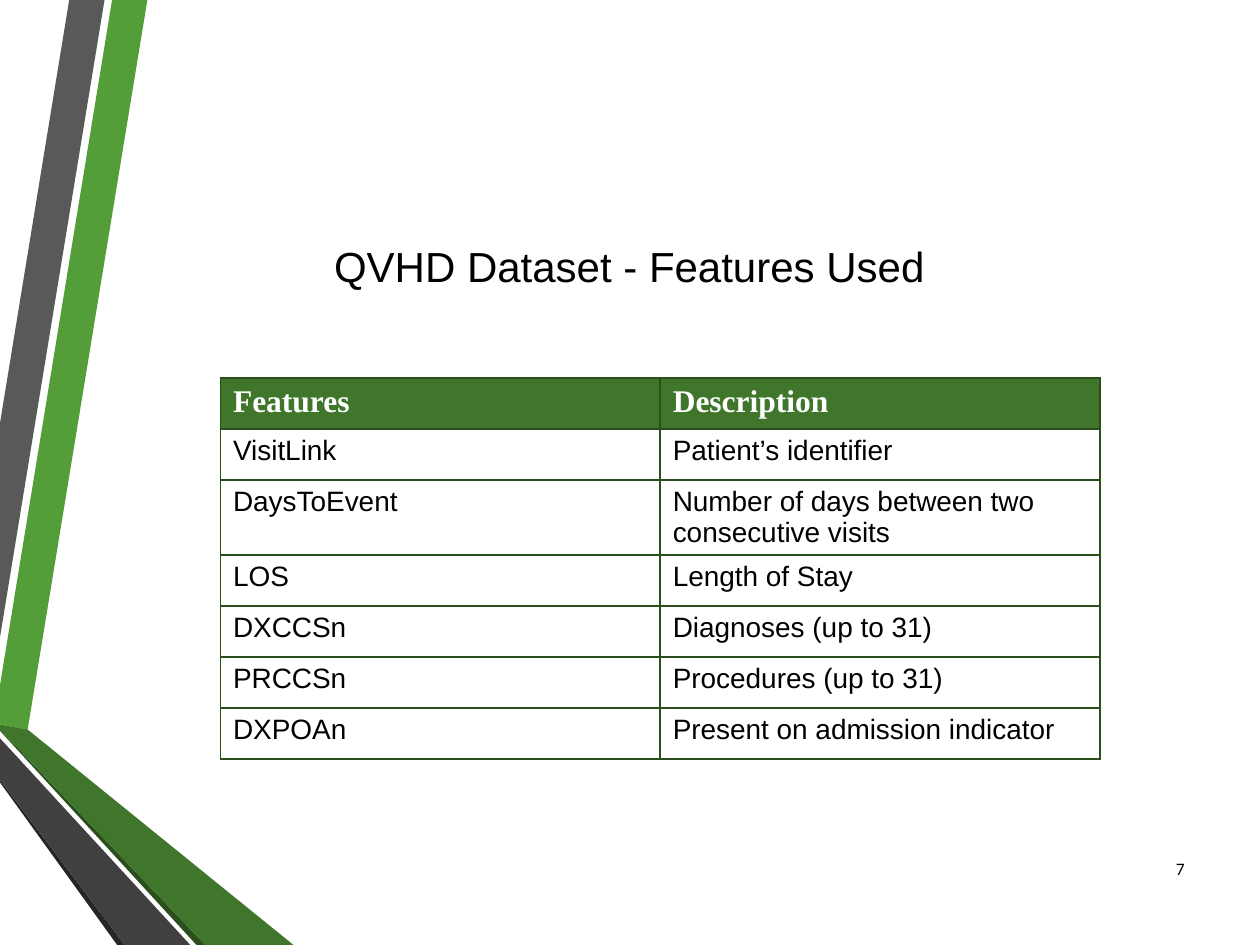
"""Builds the slide listing the features used from the QVHD dataset."""
from dataclasses import dataclass

from lxml import etree
from pptx import Presentation
from pptx.dml.color import RGBColor
from pptx.enum.text import MSO_ANCHOR, PP_ALIGN
from pptx.oxml.ns import qn
from pptx.util import Inches, Pt

TOP, MIDDLE = MSO_ANCHOR.TOP, MSO_ANCHOR.MIDDLE
CENTER, RIGHT = PP_ALIGN.CENTER, PP_ALIGN.RIGHT
TITLE_ONLY = 5


@dataclass(frozen=True)
class Theme:
    """Colours, fonts and sizes of the slide."""
    green: str = "549E39"
    mid_green: str = "3F762B"
    dark_green: str = "2A4F1C"
    gray: str = "595959"
    dark_gray: str = "404040"
    charcoal: str = "262626"
    ink: str = "000000"
    paper: str = "FFFFFF"
    body_font: str = "Arial"
    header_font: str = "Times New Roman"
    number_font: str = "Calibri"
    title_size: int = 24
    header_size: int = 18
    body_size: int = 16
    number_size: int = 10
    border_width: int = 1


THEME = Theme()

RIBBONS = [
    (THEME.green, [(0, 5.44), (0, 5.75), (0.22, 5.79), (1.17, 0), (0.89, 0)]),
    (THEME.gray, [(0.83, 0), (0.55, 0), (0, 3.36), (0, 5.06)]),
    (THEME.charcoal, [(0, 6.19), (0, 6.21), (0.93, 7.5), (0.99, 7.5)]),
    (THEME.dark_green, [(0, 5.79), (0, 5.8), (1.56, 7.5), (1.63, 7.5)]),
    (THEME.mid_green, [(0, 5.79), (1.63, 7.5), (2.33, 7.5), (0.22, 5.79), (0, 5.75)]),
    (THEME.dark_gray, [(0, 6.19), (0.99, 7.5), (1.51, 7.5), (0, 5.86)]),
]

FEATURES = [
    ("Features", "Description"),
    ("VisitLink", "Patient’s identifier"),
    ("DaysToEvent", "Number of days between two consecutive visits"),
    ("LOS", "Length of Stay"),
    ("DXCCSn", "Diagnoses (up to 31)"),
    ("PRCCSn", "Procedures (up to 31)"),
    ("DXPOAn", "Present on admission indicator"),
]


def add_run(paragraph, text, font, size, color=THEME.ink, bold=False):
    """Append a formatted run to a paragraph."""
    run = paragraph.add_run()
    run.text = text
    run.font.name = font
    run.font.size = Pt(size)
    run.font.bold = bold
    run.font.color.rgb = RGBColor.from_string(color)


def add_ribbon(slide, color, corners):
    """Draw one closed, filled ribbon from corners in inches."""
    points = [(Inches(x), Inches(y)) for x, y in corners]
    builder = slide.shapes.build_freeform(*points[0])
    builder.add_line_segments(points[1:], close=True)
    ribbon = builder.convert_to_shape()
    ribbon.shadow.inherit = False
    ribbon.fill.solid()
    ribbon.fill.fore_color.rgb = RGBColor.from_string(color)
    ribbon.line.fill.background()


def set_title(slide, text):
    """Place and fill the title placeholder."""
    title = slide.shapes.title
    title.left, title.top = Inches(1.75), Inches(1.86)
    title.width, title.height = Inches(6.49), Inches(0.5)
    title.text_frame.vertical_anchor = TOP
    heading = title.text_frame.paragraphs[0]
    heading.alignment = CENTER
    add_run(heading, text, THEME.body_font, THEME.title_size)


def add_page_number(slide, number):
    """Add the page number at the lower right."""
    box = slide.shapes.add_textbox(Inches(9.05), Inches(6.69), Inches(0.45), Inches(0.4))
    box.text_frame.word_wrap = True
    box.text_frame.vertical_anchor = MIDDLE
    paragraph = box.text_frame.paragraphs[0]
    paragraph.alignment = RIGHT
    add_run(paragraph, number, THEME.number_font, THEME.number_size)


def set_borders(cell):
    """Outline all four sides of a cell."""
    properties = cell._tc.get_or_add_tcPr()
    for index, side in enumerate(("a:lnL", "a:lnR", "a:lnT", "a:lnB")):
        border = etree.Element(qn(side), w=str(Pt(THEME.border_width)))
        fill = etree.SubElement(border, qn("a:solidFill"))
        etree.SubElement(fill, qn("a:srgbClr"), val=THEME.dark_green)
        properties.insert(index, border)


def fill_cell(cell, text, is_header):
    """Write and format one table cell."""
    paragraph = cell.text_frame.paragraphs[0]
    if is_header:
        cell.fill.solid()
        cell.fill.fore_color.rgb = RGBColor.from_string(THEME.mid_green)
        add_run(paragraph, text, THEME.header_font, THEME.header_size, THEME.paper, True)
    else:
        cell.fill.background()
        add_run(paragraph, text, THEME.body_font, THEME.body_size)
    set_borders(cell)


def add_feature_table(slide, rows):
    """Add the table of features under its header row."""
    row_height = Inches(0.405)
    table = slide.shapes.add_table(
        len(rows), len(rows[0]), Inches(1.75), Inches(3.0),
        Inches(6.98), row_height * len(rows)).table
    table.horz_banding = False
    for row_index, texts in enumerate(rows):
        table.rows[row_index].height = row_height
        for column_index, text in enumerate(texts):
            fill_cell(table.cell(row_index, column_index), text, row_index == 0)


def main():
    """Build and save the slide."""
    deck = Presentation()
    deck.slide_width, deck.slide_height = Inches(10), Inches(7.5)
    slide = deck.slides.add_slide(deck.slide_layouts[TITLE_ONLY])
    for color, corners in RIBBONS:
        add_ribbon(slide, color, corners)
    add_feature_table(slide, FEATURES)
    set_title(slide, "QVHD Dataset - Features Used")
    add_page_number(slide, "7")
    deck.save("out.pptx")


if __name__ == "__main__":
    main()
